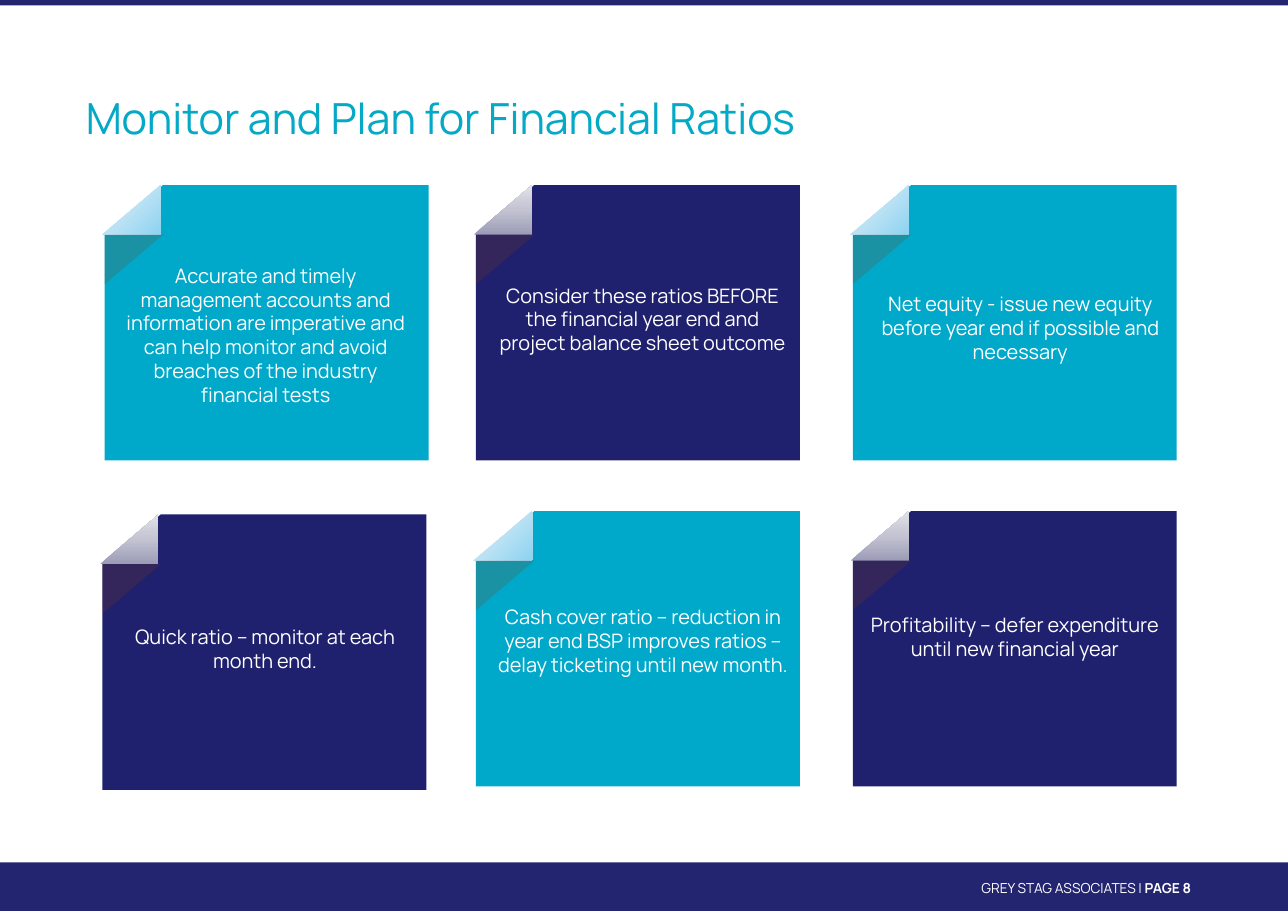
import pptx
import pptx.dml.color
import pptx.enum.shapes
import pptx.enum.text
import pptx.oxml
import pptx.oxml.ns
import pptx.util

RGB = pptx.dml.color.RGBColor
ALIGN = pptx.enum.text.PP_ALIGN
PX = 9144  # 100 px to the inch

WHITE = RGB(0xFF, 0xFF, 0xFF)
BAND = RGB(0x24, 0x25, 0x70)
TITLE = RGB(0x04, 0xA9, 0xC6)
NAVY = RGB(0x20, 0x21, 0x6E)
TEAL = RGB(0x00, 0xA8, 0xCA)
SHADE = RGB(0x84, 0x3C, 0x0B)
GREYS = [RGB(0x9C, 0x9C, 0xB7), RGB(0xC3, 0xC3, 0xD2), RGB(0xE2, 0xE2, 0xE9)]
BLUES = [RGB(0x8D, 0xD3, 0xF1), RGB(0xBB, 0xE2, 0xF4), RGB(0xDE, 0xF0, 0xF9)]

LINEAR = '<a:lin ang="16200000" scaled="0"/>'
RADIAL = '<a:path path="circle"><a:fillToRect l="100000" t="100000"/></a:path>'
STYLES = {"navy": (NAVY, GREYS, LINEAR), "teal": (TEAL, BLUES, RADIAL)}

HEAD = "Monitor and Plan for Financial Ratios"
FOOT = ["GREY STAG ASSOCIATES | ", "PAGE 8"]

# style, card left and top, text box (left, top, width, height), text
CARDS = [
    ("teal", 95, 168, (106, 239, 270, 131),
     "Accurate and timely management accounts and information are imperative "
     "and can help monitor and avoid breaches of the industry financial tests"),
    ("navy", 432, 168, (448, 257, 270, 88),
     "Consider these ratios BEFORE the financial year end and project balance "
     "sheet outcome"),
    ("teal", 774, 168, (791, 265, 270, 66),
     "Net equity - issue new equity before year end if possible and necessary"),
    ("navy", 93, 467, (105, 567, 271, 44),
     "Quick ratio – monitor at each month end."),
    ("teal", 432, 464, (452, 549, 263, 88),
     "Cash cover ratio – reduction in year end BSP improves ratios – delay "
     "ticketing until new month."),
    ("navy", 774, 464, (789, 556, 264, 66),
     "Profitability – defer expenditure until new financial year"),
]
WIDE, HIGH = 294, 250
FOLD_W, FOLD_H, LIP = 53, 45, 2


def add_bar(shapes, top, high):
    bar = shapes.add_shape(pptx.enum.shapes.MSO_SHAPE.RECTANGLE,
                           0, top * PX, 1169 * PX, high * PX)
    bar.shadow.inherit = False
    bar.fill.solid()
    bar.fill.fore_color.rgb = BAND
    bar.line.fill.background()


def add_text(shapes, box, parts, size, color, align, inset=0):
    """Add a one-paragraph text box with a run for each part."""
    frame = shapes.add_textbox(*(n * PX for n in box)).text_frame
    frame.word_wrap = True
    frame.margin_left = frame.margin_right = inset * PX
    frame.margin_top = frame.margin_bottom = inset * PX // 2
    para = frame.paragraphs[0]
    para.alignment = align
    for part in parts:
        run = para.add_run()
        run.text = part
        run.font.name = "Manrope"
        run.font.size = pptx.util.Pt(size)
        run.font.color.rgb = color
    return para


def add_free(shapes, points):
    path = shapes.build_freeform(*points[0], scale=PX)
    path.add_line_segments(points[1:], close=True)
    form = path.convert_to_shape()
    form.shadow.inherit = False
    form.line.fill.background()
    return form


def fill_flat(form, color):
    form.fill.solid()
    form.fill.fore_color.rgb = color


def fill_blend(form, colors, kind):
    stops = "".join(
        f'<a:gs pos="{i * 50000}"><a:srgbClr val="{c}"/></a:gs>'
        for i, c in enumerate(colors))
    blend = pptx.oxml.parse_xml(
        f'<a:gradFill {pptx.oxml.ns.nsdecls("a")} rotWithShape="1">'
        f'<a:gsLst>{stops}</a:gsLst>{kind}</a:gradFill>')
    outline = form.element.spPr.find(pptx.oxml.ns.qn("a:custGeom"))
    outline.addnext(blend)


def add_card(shapes, style, x, y, box, text):
    """Draw a sheet with its top left corner folded over."""
    color, tints, kind = STYLES[style]
    right, low = x + WIDE, y + HIGH
    bend, crease = x + FOLD_W, y + FOLD_H

    sheet = add_free(shapes, [(bend, y), (right, y), (right, low),
                              (x, low), (x, crease)])
    fill_flat(sheet, color)

    flap = add_free(shapes, [(bend - LIP, y), (bend - LIP, crease),
                             (x - LIP, crease)])
    fill_blend(flap, tints, kind)

    shade = add_free(shapes, [(x, crease), (bend, crease),
                              (x, crease + FOLD_H)])
    fill_flat(shade, SHADE)
    tone = shade.element.spPr.find(".//" + pptx.oxml.ns.qn("a:srgbClr"))
    tone.append(pptx.oxml.parse_xml(
        f'<a:alpha {pptx.oxml.ns.nsdecls("a")} val="20000"/>'))

    para = add_text(shapes, box, [text], 13, WHITE, ALIGN.CENTER)
    para.space_after = pptx.util.Pt(6)


def main():
    deck = pptx.Presentation()
    deck.slide_width, deck.slide_height = 1169 * PX, 827 * PX
    shapes = deck.slides.add_slide(deck.slide_layouts[6]).shapes

    add_bar(shapes, 783, 44)
    add_bar(shapes, 0, 5)
    foot = add_text(shapes, (693, 796, 388, 18), FOOT, 9, WHITE, ALIGN.RIGHT)
    foot.line_spacing = pptx.util.Pt(13)
    foot.space_after = pptx.util.Pt(6)
    foot.runs[1].font.bold = True

    add_text(shapes, (68, 78, 992, 71), [HEAD], 28, TITLE, ALIGN.LEFT, 10)
    for card in CARDS:
        add_card(shapes, *card)
    deck.save("out.pptx")


if __name__ == "__main__":
    main()
